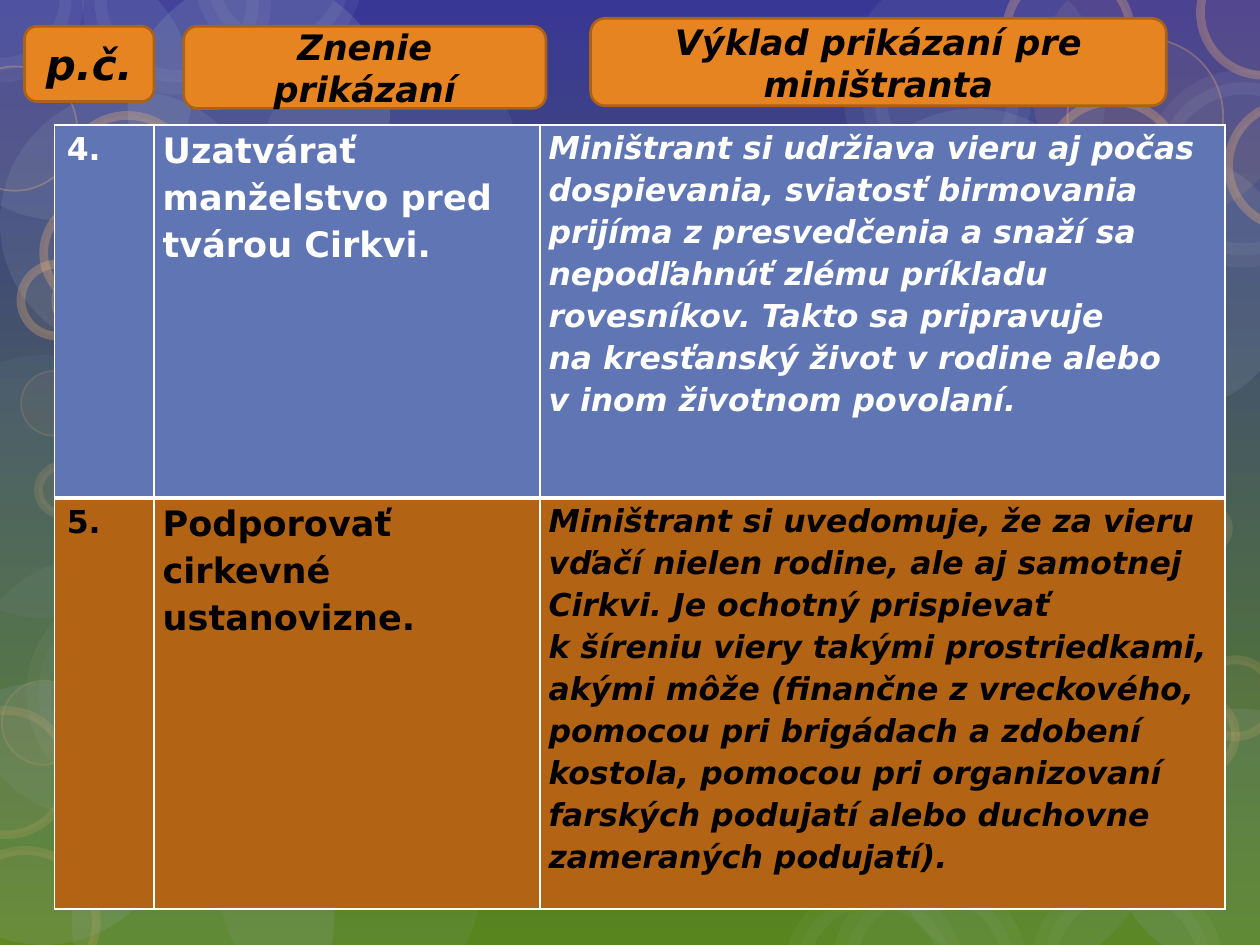
"""Build a slide that explains the fourth and fifth church precepts to altar servers."""
from dataclasses import dataclass
from typing import Optional

from pptx import Presentation
from pptx.dml.color import RGBColor
from pptx.enum.shapes import MSO_SHAPE
from pptx.enum.text import MSO_ANCHOR, PP_ALIGN
from pptx.oxml.ns import qn
from pptx.oxml.xmlchemy import OxmlElement
from pptx.util import Pt

ROUND, OVAL = MSO_SHAPE.ROUNDED_RECTANGLE, MSO_SHAPE.OVAL
MIDDLE, CENTER = MSO_ANCHOR.MIDDLE, PP_ALIGN.CENTER


@dataclass(frozen=True)
class Theme:
    """Hold the colours and type sizes of the slide."""
    font: str = "DejaVu Sans"
    sky: str = "393795"
    grass: str = "58851E"
    mist: str = "9BADC4"
    pale: str = "EFF2F5"
    peach: str = "F0B57A"
    pill: str = "E68422"
    edge: str = "AA6219"
    blue: str = "6076B4"
    brown: str = "B26314"
    white: str = "FFFFFF"
    black: str = "000000"
    small: int = 18
    mid: int = 20
    large: int = 24


THEME = Theme()


@dataclass(frozen=True)
class Look:
    """Describe a bubble's fill and outline, with opacity in percent."""
    fill: str
    alpha: int
    line: Optional[str] = None
    width: float = 0
    clear: int = 0


@dataclass(frozen=True)
class Pill:
    """Describe a rounded heading."""
    left: float
    top: float
    width: float
    height: float
    text: str
    size: int


@dataclass(frozen=True)
class Row:
    """Describe one table row, with each cell as a tuple of lines."""
    height: float
    fill: str
    ink: str
    cells: tuple


BUBBLES = {
    Look(THEME.mist, 8): [(-19, 318, 150), (125, 429, 150), (-50, 203, 150)],
    Look(THEME.mist, 10): [(41, 86, 150), (148, 22, 150), (482, -22, 150), (508, 405, 150)],
    Look(THEME.mist, 15): [(41, 451, 150), (-40, -24, 150), (0, 52, 150), (590, 86, 150),
                           (634, 405, 150), (-50, 390, 150), (482, 62, 150)],
    Look(THEME.mist, 20): [(73, -13, 150)],
    Look(THEME.peach, 10): [(590, -24, 150)],
    Look(THEME.mist, 10, THEME.pale, 14, 6): [(661, 47, 99), (500, 17, 82), (54, -47, 94),
                                              (118, -54, 82), (-41, -42, 82)],
    Look(THEME.mist, 6, THEME.pale, 14, 4): [(22, 341, 110), (455, 511, 89), (482, 505, 98),
                                             (596, 505, 96)],
    Look(THEME.peach, 5, THEME.peach, 1, 15): [(1, 389, 48), (12, 212, 37)],
    Look(THEME.peach, 5, THEME.peach, 5, 15): [(-26, 486, 81), (-32, 406, 71), (662, 398, 44),
                                               (684, 377, 44), (678, 290, 24), (22, 266, 28)],
    Look(THEME.peach, 5, THEME.peach, 1, 30): [(-27, 38, 71), (30, 148, 48), (610, 22, 89)],
    Look(THEME.peach, 5, THEME.peach, 5, 30): [(37, 66, 72), (25, 114, 61), (12, 151, 41),
                                               (575, -17, 71), (686, -29, 72), (702, 59, 71),
                                               (598, 58, 76)],
}

PILLS = [
    Pill(14, 15, 74, 43, "p.č.", THEME.large),
    Pill(105, 15, 207, 47, "Znenie prikázaní", THEME.mid),
    Pill(337.5, 10.5, 329, 50, "Výklad prikázaní pre miništranta", THEME.mid),
]

WIDTHS = (57, 220.5, 391.5)
ROWS = [
    Row(213, THEME.blue, THEME.white, (
        ("4.",),
        ("Uzatvárať manželstvo pred tvárou Cirkvi.",),
        ("Miništrant si udržiava vieru aj počas dospievania, sviatosť birmovania prijíma "
         "z presvedčenia a snaží sa nepodľahnúť zlému príkladu rovesníkov. Takto sa pripravuje",
         "na kresťanský život v rodine alebo",
         "v inom životnom povolaní."))),
    Row(235, THEME.brown, THEME.black, (
        ("5.",),
        ("Podporovať cirkevné ustanovizne.",),
        ("Miništrant si uvedomuje, že za vieru vďačí nielen rodine, ale aj samotnej Cirkvi. "
         "Je ochotný prispievať",
         "k šíreniu viery takými prostriedkami, akými môže (finančne z vreckového, pomocou pri "
         "brigádach a zdobení kostola, pomocou pri organizovaní farských podujatí alebo "
         "duchovne zameraných podujatí)."))),
]


def tint(color) -> RGBColor:
    """Turn a hex string into a colour."""
    return RGBColor.from_string(color)


def fade(node, alpha: int) -> None:
    """Set the opacity of the solid fill under a node."""
    mark = OxmlElement("a:alpha")
    mark.set("val", str(alpha * 1000))
    node.find(qn("a:solidFill")).find(qn("a:srgbClr")).append(mark)


def write(para, lines: tuple, size: int, ink: str, slant: bool) -> None:
    """Add bold runs to a paragraph, one for each line."""
    for num, line in enumerate(lines):
        if num:
            para.add_line_break()
        run = para.add_run()
        run.text = line
        font = run.font
        font.name, font.size, font.bold, font.italic = THEME.font, Pt(size), True, slant
        font.color.rgb = tint(ink)


def draw_bubble(slide, look: Look, spot: tuple) -> None:
    """Draw a faint circle and move it to the layout."""
    left, top, size = spot
    shape = slide.shapes.add_shape(OVAL, Pt(left), Pt(top), Pt(size), Pt(size))
    shape.shadow.inherit = False
    shape.fill.solid()
    shape.fill.fore_color.rgb = tint(look.fill)
    props = shape.element.spPr
    fade(props, look.alpha)
    if look.line:
        shape.line.color.rgb = tint(look.line)
        shape.line.width = Pt(look.width)
        fade(props.find(qn("a:ln")), look.clear)
    else:
        shape.line.fill.background()


def draw_back(slide) -> None:
    """Give the layout its gradient and its bubbles."""
    page = slide.slide_layout
    for holder in list(page.placeholders):
        holder.element.getparent().remove(holder.element)
    fill = page.background.fill
    fill.gradient()
    fill.gradient_angle = 270
    for stop, color in zip(fill.gradient_stops, (THEME.sky, THEME.grass)):
        stop.color.rgb = tint(color)
    for look, spots in BUBBLES.items():
        for spot in spots:
            draw_bubble(slide, look, spot)
    for shape in list(slide.shapes):
        page.shapes.element.append(shape.element)


def draw_pill(slide, pill: Pill) -> None:
    """Draw a rounded heading."""
    shape = slide.shapes.add_shape(ROUND, Pt(pill.left), Pt(pill.top),
                                   Pt(pill.width), Pt(pill.height))
    shape.shadow.inherit = False
    shape.fill.solid()
    shape.fill.fore_color.rgb = tint(THEME.pill)
    shape.line.color.rgb = tint(THEME.edge)
    shape.line.width = Pt(1.5)
    frame = shape.text_frame
    frame.word_wrap, frame.vertical_anchor = True, MIDDLE
    para = frame.paragraphs[0]
    para.alignment = CENTER
    write(para, (pill.text,), pill.size, THEME.black, True)


def frame_cell(cell, top: float, base: float) -> None:
    """Give a cell white borders."""
    props = cell._tc.get_or_add_tcPr()
    for num, (side, width) in enumerate(zip("LRTB", (1, 1, top, base))):
        line = OxmlElement(f"a:ln{side}")
        line.set("w", str(Pt(width)))
        fill, color = OxmlElement("a:solidFill"), OxmlElement("a:srgbClr")
        color.set("val", THEME.white)
        fill.append(color)
        line.append(fill)
        props.insert(num, line)


def draw_table(slide) -> None:
    """Draw the table of precepts."""
    table = slide.shapes.add_table(len(ROWS), len(WIDTHS), Pt(31), Pt(71.5), Pt(sum(WIDTHS)),
                                   Pt(sum(row.height for row in ROWS))).table
    table.first_row = table.horz_banding = False
    for col, width in zip(table.columns, WIDTHS):
        col.width = Pt(width)
    sizes = (THEME.small, THEME.mid, THEME.small)
    for num, row in enumerate(ROWS):
        table.rows[num].height = Pt(row.height)
        for col, lines in enumerate(row.cells):
            cell = table.cell(num, col)
            cell.fill.solid()
            cell.fill.fore_color.rgb = tint(row.fill)
            frame_cell(cell, 3 if num else 1, 1 if num else 3)
            para = cell.text_frame.paragraphs[0]
            if col:
                cell.margin_left = cell.margin_right = Pt(5)
                cell.margin_top = cell.margin_bottom = Pt(0)
                para.line_spacing = 1.15
            write(para, lines, sizes[col], row.ink, col == 2)


def main() -> None:
    """Build and save the slide."""
    deck = Presentation()
    deck.slide_width, deck.slide_height = Pt(720), Pt(540)
    slide = deck.slides.add_slide(deck.slide_layouts[6])
    draw_back(slide)
    draw_table(slide)
    for pill in PILLS:
        draw_pill(slide, pill)
    deck.save("out.pptx")


if __name__ == "__main__":
    main()
